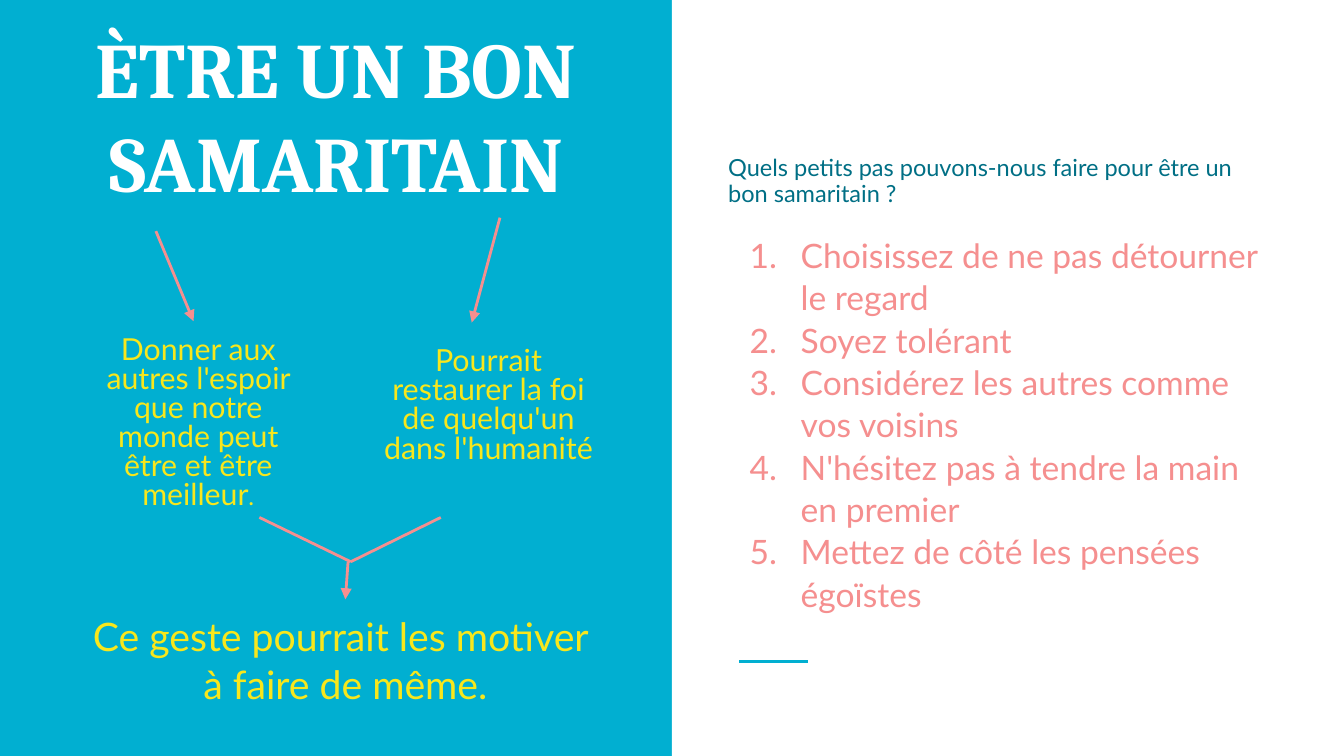
import pptx
import pptx.util
from pptx.util import Inches, Pt
from pptx.dml.color import RGBColor
from pptx.enum.shapes import MSO_CONNECTOR, MSO_SHAPE
from pptx.enum.text import MSO_ANCHOR, MSO_AUTO_SIZE, PP_ALIGN
from pptx.oxml.ns import qn
from lxml import etree

CYAN, TEAL, WHITE = "01AFD1", "006F85", "FFFFFF"
YELLOW, CORAL = "F8E71C", "F58F8F"

TITLE = "ÈTRE UN BON SAMARITAIN"
QUESTION = "Quels petits pas pouvons-nous faire pour être un bon samaritain ?"
STEPS = [
    "Choisissez de ne pas détourner le regard",
    "Soyez tolérant",
    "Considérez les autres comme vos voisins",
    "N'hésitez pas à tendre la main en premier",
    "Mettez de côté les pensées égoïstes",
]
# Position, line spacing, runs as (text, size); "\n" is a line break
EFFECTS = [
    ((0.62, 2.41, 1.71, 1.57), 0.8,
     [("Donner aux autres l'espoir que notre monde peut être et être meilleur", 16.2),
      (".", 13.1)]),
    ((2.68, 2.49, 1.91, 1.33), 0.8,
     [("Pourrait restaurer la foi de quelqu'un dans l'humanité", 16.3)]),
    ((0.43, 4.46, 4.28, 1.33), 1.0,
     [("Ce geste pourrait les motiver \nà faire de même.", 21)]),
]
# Start, end, has arrowhead
LINKS = [
    ((1.16, 1.72), (1.44, 2.39), True),
    ((3.72, 1.62), (3.51, 2.40), True),
    ((1.93, 3.85), (2.61, 4.18), False),
    ((3.28, 3.85), (2.61, 4.18), False),
    ((2.59, 4.18), (2.57, 4.46), True),
]


def rgb(value):
    return RGBColor.from_string(value)


def format_frame(frame, anchor):
    frame.word_wrap = True
    frame.auto_size = MSO_AUTO_SIZE.NONE
    frame.vertical_anchor = anchor
    frame.margin_left = frame.margin_right = Inches(0.1)
    frame.margin_top = frame.margin_bottom = Inches(0.1)


def add_text_box(place, anchor=MSO_ANCHOR.TOP):
    box = slide.shapes.add_textbox(*map(Inches, place))
    format_frame(box.text_frame, anchor)
    return box.text_frame


def add_span(para, text, size, color, font="Lato", bold=False):
    for index, line in enumerate(text.split("\n")):
        if index:
            para.add_line_break()
        span = para.add_run()
        span.text = line
        span.font.size, span.font.name, span.font.bold = Pt(size), font, bold
        span.font.color.rgb = rgb(color)


def number_paragraph(para, color):
    """Give the paragraph a coloured automatic number and a hanging indent."""
    properties = para._p.get_or_add_pPr()
    properties.set("marL", str(Inches(0.5)))
    properties.set("indent", str(Inches(-0.38)))
    bullet_color = etree.SubElement(properties, qn("a:buClr"))
    etree.SubElement(bullet_color, qn("a:srgbClr"), val=color)
    etree.SubElement(properties, qn("a:buAutoNum"), type="arabicPeriod")


def add_line(start, end, color, arrow=False):
    line = slide.shapes.add_connector(
        MSO_CONNECTOR.STRAIGHT, *map(Inches, start + end))
    line.line.color.rgb = rgb(color)
    line.line.width = Pt(1.5)
    if arrow:
        etree.SubElement(line.line._get_or_add_ln(), qn("a:tailEnd"), type="triangle")
    etree.SubElement(line._element.spPr, qn("a:effectLst"))


deck = pptx.Presentation()
deck.slide_width, deck.slide_height = Inches(10), Inches(10 * 9 / 16)
slide = deck.slides.add_slide(deck.slide_layouts[5])
slide.background.fill.solid()
slide.background.fill.fore_color.rgb = rgb(CYAN)

panel = slide.shapes.add_shape(
    MSO_SHAPE.RECTANGLE, Inches(5), 0, Inches(5), deck.slide_height)
panel.shadow.inherit = False
panel.fill.solid()
panel.fill.fore_color.rgb = rgb(WHITE)
panel.line.fill.background()
add_line((5.5, 4.92), (6.01, 4.92), CYAN)

title = slide.shapes.title
title.left, title.top, title.width, title.height = map(Inches, (0, -0.22, 5, 1.87))
format_frame(title.text_frame, MSO_ANCHOR.BOTTOM)
title_para = title.text_frame.paragraphs[0]
title_para.alignment = PP_ALIGN.CENTER
add_span(title_para, TITLE, 42, WHITE, "Cambria", True)

question = add_text_box((5.32, 0.96, 4.2, 0.78), MSO_ANCHOR.MIDDLE).paragraphs[0]
question.line_spacing = 0.95
question.space_after = Pt(12)
add_span(question, QUESTION, 12.6, TEAL)

steps = add_text_box((5.36, 1.54, 4.2, 3.22), MSO_ANCHOR.MIDDLE)
for index, step in enumerate(STEPS):
    para = steps.add_paragraph() if index else steps.paragraphs[0]
    para.line_spacing = 1.05
    number_paragraph(para, CORAL)
    add_span(para, step, 18, CORAL)

for place, spacing, spans in EFFECTS:
    para = add_text_box(place).paragraphs[0]
    para.alignment = PP_ALIGN.CENTER
    para.line_spacing = spacing
    for text, size in spans:
        add_span(para, text, size, YELLOW)

for start, end, arrow in LINKS:
    add_line(start, end, CORAL, arrow)

deck.save("out.pptx")
